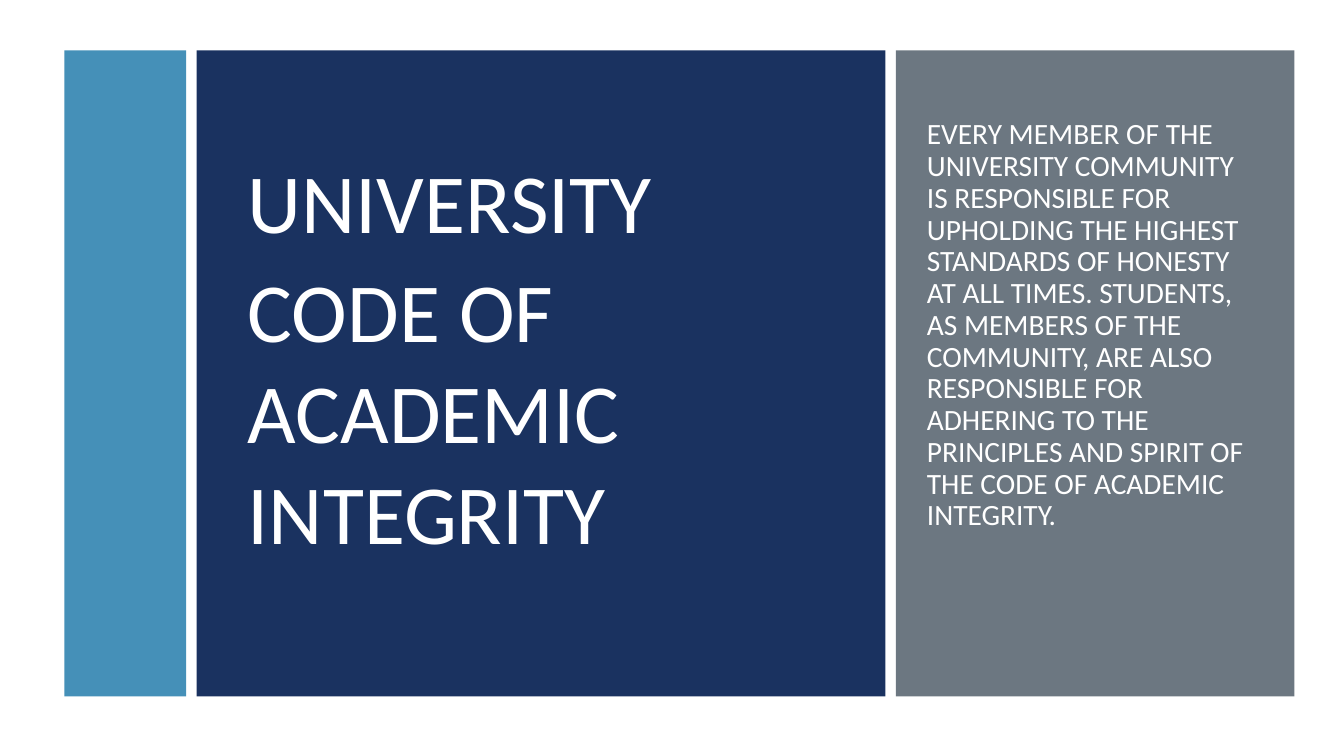
from pptx import Presentation
from pptx.dml.color import RGBColor
from pptx.enum import shapes, text
from pptx.util import Pt

WHITE = "FFFFFF"
FONT = "Calibri"
PANEL_TOP, PANEL_HEIGHT = 36, 461.5

TITLE = ["UNIVERSITY", "CODE OF ACADEMIC INTEGRITY"]
STATEMENT = [
    "EVERY MEMBER OF THE UNIVERSITY COMMUNITY IS RESPONSIBLE FOR UPHOLDING "
    "THE HIGHEST STANDARDS OF HONESTY AT ALL TIMES. STUDENTS, AS MEMBERS OF "
    "THE COMMUNITY, ARE ALSO RESPONSIBLE FOR ADHERING TO THE PRINCIPLES AND "
    "SPIRIT OF THE CODE OF ACADEMIC INTEGRITY."
]


def color(value):
    return RGBColor.from_string(value)


def add_panel(page, left, width, fill):
    panel = page.shapes.add_shape(
        shapes.MSO_SHAPE.RECTANGLE,
        Pt(left), Pt(PANEL_TOP), Pt(width), Pt(PANEL_HEIGHT))
    panel.shadow.inherit = False
    panel.fill.solid()
    panel.fill.fore_color.rgb = color(fill)
    panel.line.fill.background()


def add_text(page, left, top, width, height, lines, size,
             line_spacing=1.0, space_after=0, bottom_inset=3.6):
    box = page.shapes.add_textbox(Pt(left), Pt(top), Pt(width), Pt(height))
    frame = box.text_frame
    frame.word_wrap = True
    frame.vertical_anchor = text.MSO_ANCHOR.MIDDLE
    frame.margin_bottom = Pt(bottom_inset)
    frame.text = "\n".join(lines)
    for para in frame.paragraphs:
        para.line_spacing = line_spacing
        para.space_after = Pt(space_after)
        for span in para.runs:
            span.font.name = FONT
            span.font.size = Pt(size)
            span.font.color.rgb = color(WHITE)


def add_title_panel(page, left, width):
    add_panel(page, left, width, "1A3260")
    add_text(page, left + 29.5, PANEL_TOP + 31, width - 57, 373.5,
             TITLE, 60, space_after=6)


def add_statement_panel(page, left, width):
    add_panel(page, left, width, "6C7781")
    # The deeper bottom inset lifts the statement above the middle
    add_text(page, left + 15, PANEL_TOP + 16.5, width - 36.5, 388,
             STATEMENT, 21, line_spacing=0.9, bottom_inset=31)


def main():
    deck = Presentation()
    deck.slide_width, deck.slide_height = Pt(960), Pt(540)
    page = deck.slides.add_slide(deck.slide_layouts[6])
    page.background.fill.solid()
    page.background.fill.fore_color.rgb = color(WHITE)

    # Three panels side by side: accent, title, statement
    add_panel(page, 46, 87, "4590B8")
    add_title_panel(page, 140.5, 492)
    add_statement_panel(page, 640, 284.5)

    deck.save("out.pptx")


if __name__ == "__main__":
    main()
